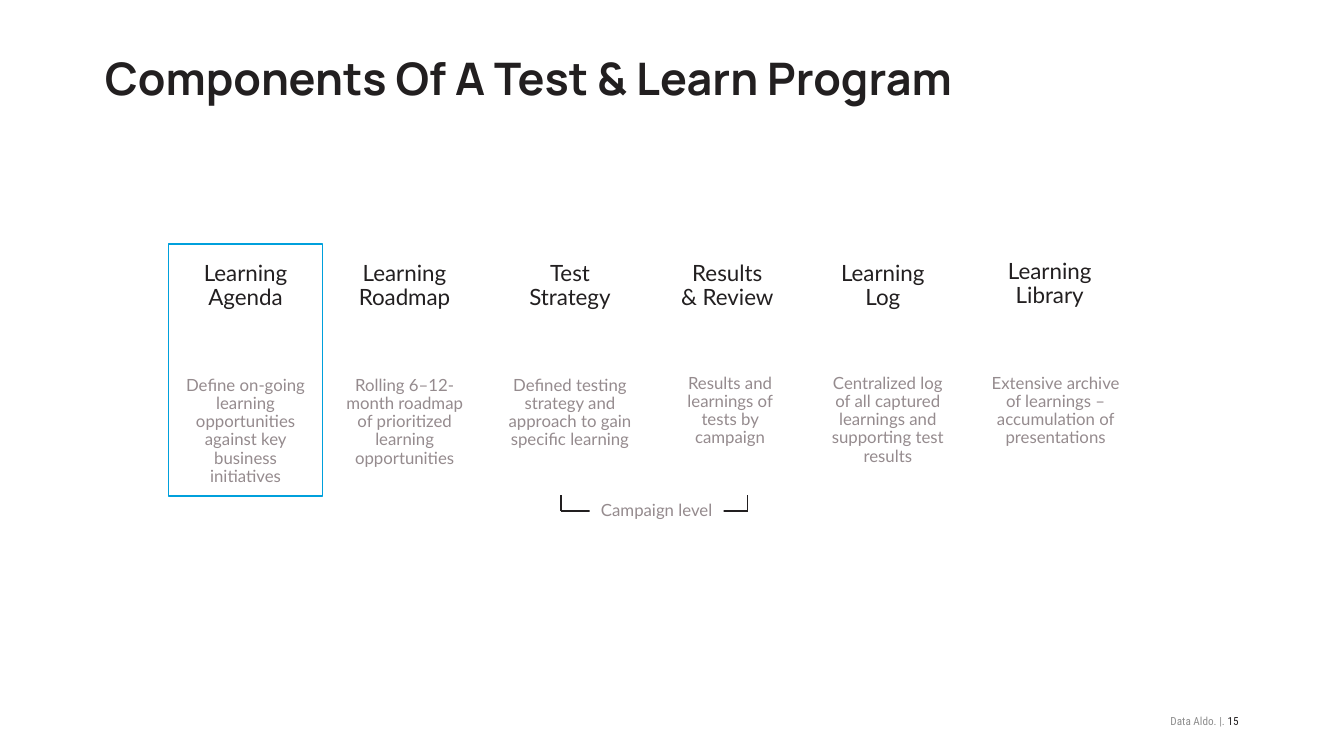
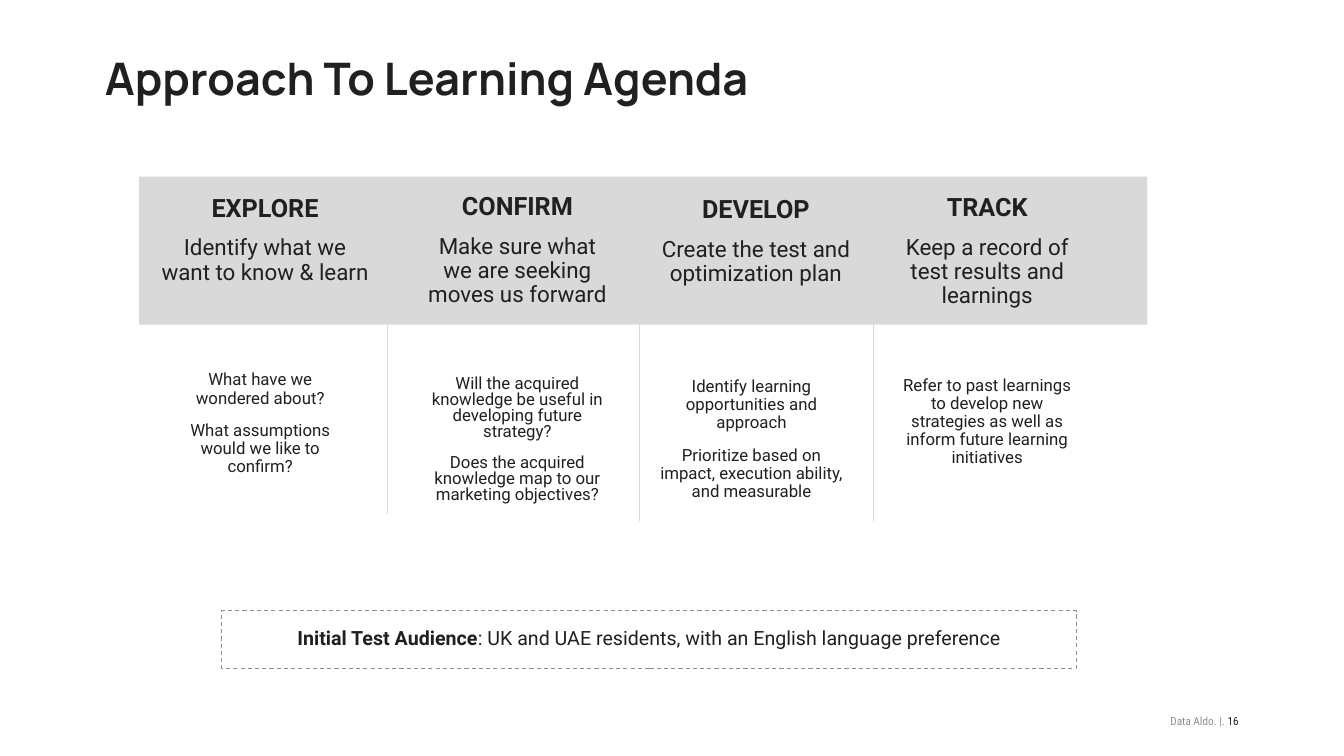
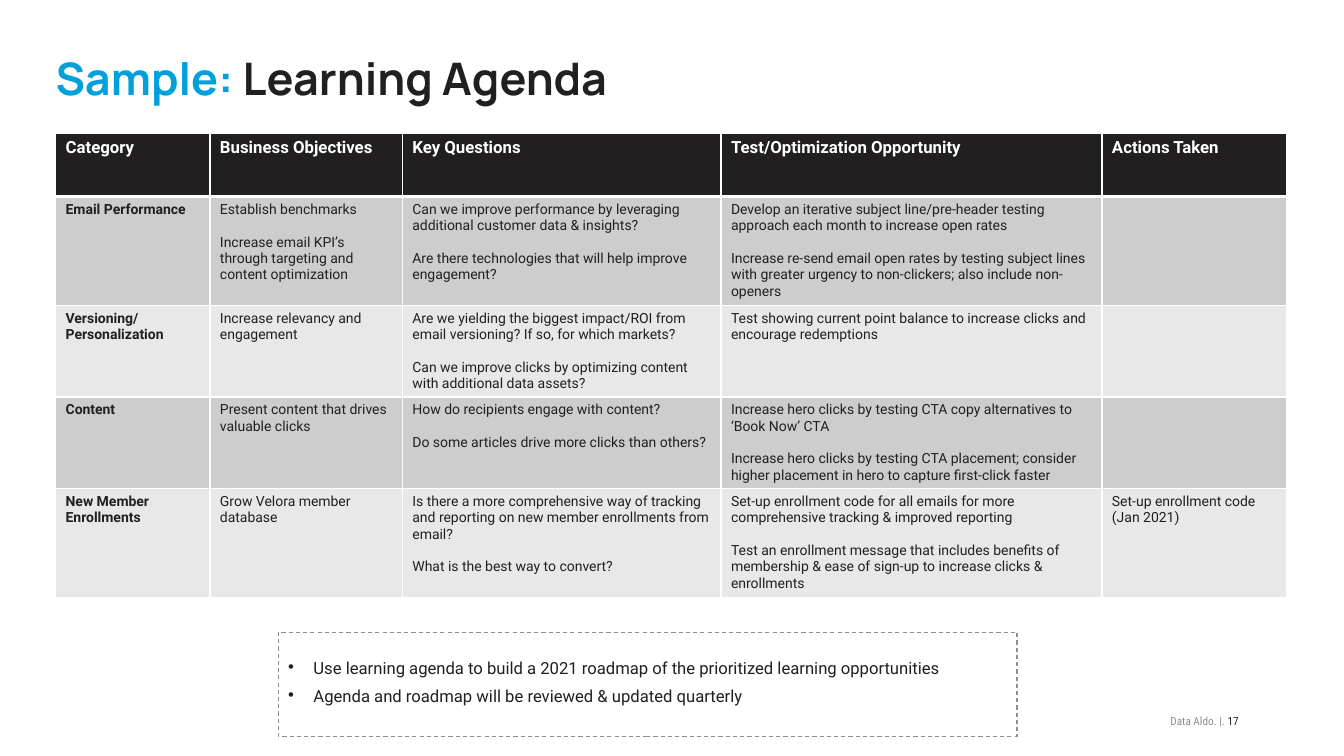
from lxml import etree
from pptx import Presentation
from pptx.dml.color import RGBColor
from pptx.enum.dml import MSO_LINE
from pptx.enum.shapes import MSO_CONNECTOR, MSO_SHAPE
from pptx.enum.text import MSO_ANCHOR, MSO_AUTO_SIZE, PP_ALIGN
from pptx.oxml.ns import qn
from pptx.util import Cm, Pt

LEFT, CENTER, RIGHT = PP_ALIGN.LEFT, PP_ALIGN.CENTER, PP_ALIGN.RIGHT
TOP, MIDDLE = MSO_ANCHOR.TOP, MSO_ANCHOR.MIDDLE
STRAIGHT, RECTANGLE = MSO_CONNECTOR.STRAIGHT, MSO_SHAPE.RECTANGLE
DASH, NO_FIT = MSO_LINE.DASH, MSO_AUTO_SIZE.NONE
TITLE_AND_CONTENT, TITLE_ONLY = 1, 5

INK, GREY, BLUE, WHITE = "221F20", "958B8E", "00A0DC", "FFFFFF"
FOOTER_GREY, BAND_GREY = "8D8D8D", "D9D9D9"
ROW_GREYS = "CDCDCD", "E8E8E8"

TITLE = {"name": "Manrope", "size": Pt(32), "bold": True, "color": INK}
FOOTER = {"name": "Roboto Condensed", "size": Pt(8), "color": FOOTER_GREY}
HEADING = {"name": "Lato", "size": Pt(16), "color": INK}
DETAIL = {"name": "Lato", "size": Pt(12), "color": GREY}
BODY = {"name": "Roboto", "size": Pt(12), "bold": False, "color": INK}
STAGE = BODY | {"size": Pt(18), "bold": True}
CELL = BODY | {"size": Pt(10)}
NO_INSETS = (0, 0, 0, 0)
TEXT_INSETS = (0.25, 0.13, 0.25, 0.13)

# heading, its left and width, top offset; detail, its left, width, height, top offset
COMPONENTS = [
    ("Learning Agenda", 3.94, 4.5, 6.48,
     "Define on-going learning opportunities against key business initiatives",
     4.27, 3.84, 3.02, 9.37),
    ("Learning Roadmap", 8.2, 3.99, 6.48,
     "Rolling 6–12-month roadmap of prioritized learning opportunities",
     8.28, 3.84, 2.57, 9.37),
    ("Test Strategy", 12.75, 3.23, 6.48,
     "Defined testing strategy and approach to gain specific learning",
     12.37, 3.99, 2.11, 9.37),
    ("Results\v& Review", 16.54, 3.58, 6.48,
     "Results and learnings of tests by campaign",
     16.61, 3.58, 2.11, 9.32),
    ("Learning Log", 20.8, 2.9, 6.48,
     "Centralized log of all captured learnings and supporting test results",
     20.65, 3.45, 2.57, 9.32),
    ("Learning Library", 24.46, 3.99, 6.43,
     "Extensive archive of learnings – accumulation of presentations",
     24.74, 3.73, 2.57, 9.32),
]

# name, purpose, head box, head insets, points, points box, line spacing of points
STAGES = [
    ("EXPLORE", "Identify what we want to know & learn",
     (3.99, 4.29, 5.38, 4.47), (0, 0, 0, 0.95),
     ["What have we wondered about?",
      "What assumptions would we like to confirm?"],
     (4.11, 8.84, 4.9, 3.68), 0.9),
    ("CONFIRM", "Make sure what we are seeking moves us forward",
     (10.46, 4.09, 5.16, 4.47), TEXT_INSETS,
     ["Will the acquired knowledge be useful in developing future strategy?",
      "Does the acquired knowledge map to our marketing objectives?"],
     (10.46, 9.25, 5.16, 3.68), 0.8),
    ("DEVELOP", "Create the test and optimization plan",
     (16.36, 4.32, 5.38, 4.47), (0.25, 0.13, 0.25, 1.08),
     ["Identify learning opportunities and approach",
      "Prioritize based on impact, execution ability, and measurable"],
     (16.36, 8.84, 5.16, 4.47), 0.9),
    ("TRACK", "Keep a record of test results and learnings",
     (22.3, 4.11, 5.16, 4.47), TEXT_INSETS,
     ["Refer to past learnings to develop new strategies as well as "
      "inform future learning initiatives"],
     (22.3, 8.84, 5.16, 3.58), 0.9),
]

AGENDA_WIDTHS = [3.89, 4.85, 8.03, 9.6, 4.65]
AGENDA_HEIGHTS = [1.6, 2.74, 2.31, 2.31, 2.74]
AGENDA = [
    [["Category"], ["Business Objectives"], ["Key Questions"],
     ["Test/Optimization Opportunity"], ["Actions Taken"]],
    [["Email Performance"],
     ["Establish benchmarks",
      "Increase email KPI’s through targeting and content optimization"],
     ["Can we improve performance by leveraging additional customer data & insights?",
      "Are there technologies that will help improve engagement?"],
     ["Develop an iterative subject line/pre-header testing approach each month "
      "to increase open rates",
      "Increase re-send email open rates by testing subject lines with greater "
      "urgency to non-clickers; also include non-openers"],
     []],
    [["Versioning/ Personalization"],
     ["Increase relevancy and engagement"],
     ["Are we yielding the biggest impact/ROI from email versioning? "
      "If so, for which markets?",
      "Can we improve clicks by optimizing content with additional data assets?"],
     ["Test showing current point balance to increase clicks and encourage redemptions"],
     []],
    [["Content"],
     ["Present content that drives valuable clicks"],
     ["How do recipients engage with content?",
      "Do some articles drive more clicks than others?"],
     ["Increase hero clicks by testing CTA copy alternatives to ‘Book Now’ CTA",
      "Increase hero clicks by testing CTA placement; consider higher placement "
      "in hero to capture first-click faster"],
     []],
    [["New Member Enrollments"],
     ["Grow Velora member database"],
     ["Is there a more comprehensive way of tracking and reporting on new member "
      "enrollments from email?",
      "What is the best way to convert?"],
     ["Set-up enrollment code for all emails for more comprehensive tracking "
      "& improved reporting",
      "Test an enrollment message that includes benefits of membership & ease "
      "of sign-up to increase clicks & enrollments"],
     ["Set-up enrollment code (Jan 2021)"]],
]


def rgb(colour):
    return RGBColor.from_string(colour)


def lengths(values):
    return [Cm(value) for value in values]


def set_all(target, values):
    for name, value in values.items():
        setattr(target, name, value)


def style_font(font, style):
    for name, value in style.items():
        if name == "color":
            font.color.rgb = rgb(value)
        else:
            setattr(font, name, value)


def add_bullet(para):
    properties = para._p.get_or_add_pPr()
    properties.set("marL", str(Cm(0.64)))
    properties.set("indent", str(-Cm(0.64)))
    etree.SubElement(properties, qn("a:buFont")).set("typeface", "Arial")
    etree.SubElement(properties, qn("a:buChar")).set("char", "•")


def write(frame, paras, style, align=CENTER, spacing=0.9, gap=10, bullets=False):
    """Write paragraphs, each a string or a list of (text, style changes)."""
    for index, spans in enumerate(paras):
        para = frame.add_paragraph() if index else frame.paragraphs[0]
        set_all(para, {"alignment": align, "line_spacing": spacing,
                       "space_before": Pt(gap if index else 0)})
        if bullets:
            add_bullet(para)
        if isinstance(spans, str):
            spans = [(spans, {})]
        for text, changes in spans:
            for number, part in enumerate(text.split("\v")):
                if number:
                    para.add_line_break()
                span = para.add_run()
                span.text = part
                style_font(span.font, style | changes)


def set_frame(frame, anchor=TOP, insets=TEXT_INSETS, wrap=True):
    set_all(frame, {"word_wrap": wrap, "auto_size": NO_FIT, "vertical_anchor": anchor})
    sides = "margin_left", "margin_top", "margin_right", "margin_bottom"
    set_all(frame, dict(zip(sides, lengths(insets))))


def add_text(page, place, paras, style, anchor=TOP, insets=TEXT_INSETS, **layout):
    box = page.shapes.add_textbox(*lengths(place))
    set_frame(box.text_frame, anchor, insets)
    write(box.text_frame, paras, style, **layout)


def outline(shape, colour, width, dash=None):
    shape.line.color.rgb = rgb(colour)
    set_all(shape.line, {"width": Pt(width), "dash_style": dash})


def add_rectangle(page, place, fill=None):
    shape = page.shapes.add_shape(RECTANGLE, *lengths(place))
    shape.shadow.inherit = False
    shape.line.fill.background()
    if fill:
        shape.fill.solid()
        shape.fill.fore_color.rgb = rgb(fill)
    else:
        shape.fill.background()
    return shape


def add_line(page, ends, colour, width):
    line = page.shapes.add_connector(STRAIGHT, *lengths(ends))
    outline(line, colour, width)
    etree.SubElement(line._element.spPr, qn("a:effectLst"))


def add_page(deck, layout, number, title, left=2.64):
    page = deck.slides.add_slide(deck.slide_layouts[layout])
    place = dict(zip(("left", "top", "width", "height"),
                     lengths((left, 1.27, 31.22 - left, 1.37))))
    set_all(page.shapes.title, place)
    set_frame(page.shapes.title.text_frame, insets=NO_INSETS)
    write(page.shapes.title.text_frame, [title], TITLE, align=LEFT, spacing=1)
    add_text(page, (23.6, 17.65, 7.62, 1.02),
             [[("Data Aldo. |. ", {}), (str(number), {"color": INK})]],
             FOOTER, MIDDLE, NO_INSETS, align=RIGHT, spacing=1)
    return page


def set_borders(cell, bottom):
    """Draw white cell borders; call before the cell's fill is set."""
    properties = cell._tc.get_or_add_tcPr()
    for side, width in {"lnL": 1, "lnR": 1, "lnT": 1, "lnB": bottom}.items():
        border = etree.SubElement(properties, qn("a:" + side), w=str(Pt(width)))
        fill = etree.SubElement(border, qn("a:solidFill"))
        etree.SubElement(fill, qn("a:srgbClr"), val=WHITE)


def add_agenda_table(page):
    frame = page.shapes.add_table(
        len(AGENDA), len(AGENDA_WIDTHS),
        *lengths((1.4, 3.35, sum(AGENDA_WIDTHS), sum(AGENDA_HEIGHTS))))
    table = frame.table
    set_all(table, {"first_row": True, "horz_banding": False})
    for column, width in zip(table.columns, AGENDA_WIDTHS):
        column.width = Cm(width)
    for row, height in zip(table.rows, AGENDA_HEIGHTS):
        row.height = Cm(height)
    for r, row in enumerate(AGENDA):
        for c, paras in enumerate(row):
            cell = table.cell(r, c)
            header = r == 0
            set_borders(cell, 3 if header else 1)
            cell.fill.solid()
            cell.fill.fore_color.rgb = rgb(INK if header else ROW_GREYS[(r - 1) % 2])
            style = CELL | {"bold": header or c == 0}
            if header:
                style |= {"size": Pt(12), "color": WHITE}
            write(cell.text_frame, paras, style, align=LEFT, spacing=1, gap=11.7)


def build_components(deck):
    page = add_page(deck, TITLE_ONLY, 15, "Components Of A Test & Learn Program")
    for (heading, left, width, top,
         detail, detail_left, detail_width, detail_height, detail_top) in COMPONENTS:
        add_text(page, (left, top, width, 1.5), [heading], HEADING)
        add_text(page, (detail_left, detail_top, detail_width, detail_height),
                 [detail], DETAIL)

    start, end, base = 14.14, 18.84, 12.88
    add_line(page, (start, base, end, base), INK, 1)
    for x in (start, end):
        add_line(page, (x, base, x, base - 0.41), INK, 1)
    label = add_rectangle(page, (14.86, 12.52, 3.38, 0.71), WHITE)
    set_frame(label.text_frame, wrap=False)
    write(label.text_frame, ["Campaign level"], DETAIL)

    outline(add_rectangle(page, (4.24, 6.15, 3.89, 6.35)), BLUE, 1)


def build_approach(deck):
    page = add_page(deck, TITLE_ONLY, 16, "Approach To Learning Agenda")
    add_rectangle(page, (3.51, 4.45, 25.4, 3.73), BAND_GREY)
    for name, purpose, head, insets, points, place, spacing in STAGES:
        add_text(page, head, [name, [(purpose, {"size": Pt(16), "bold": False})]],
                 STAGE, MIDDLE, insets)
        add_text(page, place, points, BODY, MIDDLE, spacing=spacing)
    for x, top, bottom in ((9.75, 6.4, 12.95), (16.1, 6.6, 13.13), (22.02, 6.6, 13.13)):
        add_line(page, (x, top, x, bottom), BAND_GREY, 0.5)

    audience = add_rectangle(page, (5.59, 15.39, 21.54, 1.45))
    outline(audience, GREY, 0.75, DASH)
    set_frame(audience.text_frame, MIDDLE)
    write(audience.text_frame,
          [[("Initial Test Audience", {"bold": True}),
            (": UK and UAE residents, with an English language preference", {})]],
          BODY | {"size": Pt(14)})


def build_sample(deck):
    page = add_page(deck, TITLE_AND_CONTENT, 17,
                    [("Sample: ", {"color": BLUE}), ("Learning Agenda", {})], left=1.4)
    add_agenda_table(page)
    notes = page.placeholders[1]
    set_all(notes, dict(zip(("left", "top", "width", "height"),
                            lengths((7.01, 15.93, 18.62, 2.62)))))
    outline(notes, GREY, 0.75, DASH)
    set_frame(notes.text_frame, MIDDLE)
    write(notes.text_frame,
          ["Use learning agenda to build a 2021 roadmap of the prioritized "
           "learning opportunities",
           "Agenda and roadmap will be reviewed & updated quarterly"],
          BODY | {"size": Pt(11.9)}, align=LEFT, spacing=0.7, bullets=True)


def main():
    deck = Presentation()
    set_all(deck, {"slide_width": Cm(33.87), "slide_height": Cm(19.05)})
    build_components(deck)
    build_approach(deck)
    build_sample(deck)
    deck.save("out.pptx")


if __name__ == "__main__":
    main()
